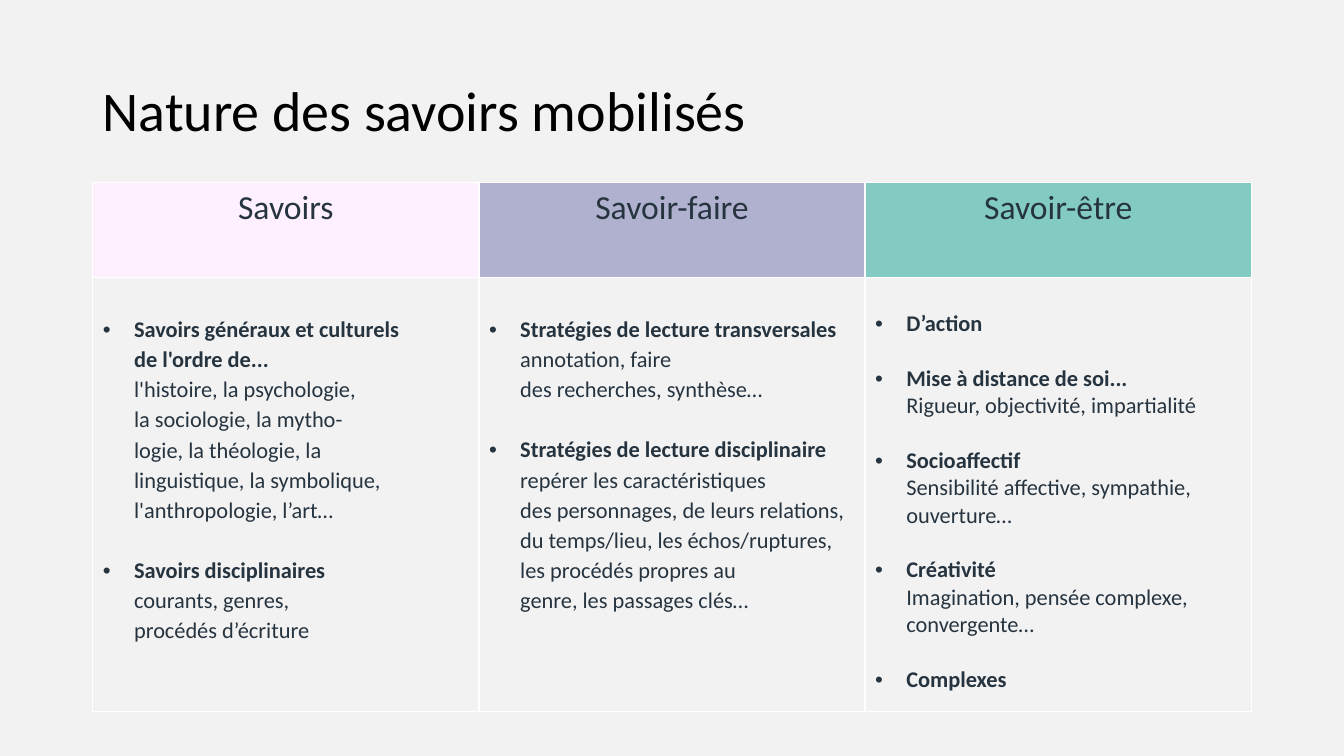
from dataclasses import dataclass

from lxml import etree
from pptx import Presentation
from pptx.dml.color import RGBColor
from pptx.enum.text import MSO_ANCHOR, PP_ALIGN
from pptx.oxml.ns import qn
from pptx.util import Inches, Pt

CENTER = PP_ALIGN.CENTER
MIDDLE = MSO_ANCHOR.MIDDLE
TIE = "~"
HARD_SPACE = chr(160)


@dataclass(frozen=True)
class Theme:
    font: str = "Calibri"
    background: str = "F2F2F2"
    title: str = "000000"
    text: str = "263440"
    border: str = "FFFFFF"
    title_size: int = 40
    header_size: int = 24
    body_size: int = 16
    border_width: int = 1


@dataclass(frozen=True)
class Column:
    heading: str
    color: str
    opacity: int
    top_margin: float
    line_spacing: float
    gap: float
    topics: tuple


THEME = Theme()

COLUMNS = (
    Column("Savoirs", "FEF0FE", 100, 0.36, 1.1, 21.5, (
        ("Savoirs généraux et culturels de~l'ordre de...",
         "l'histoire, la~psychologie, la~sociologie, la mytho-logie,~la~théologie, "
         "la linguistique,~la~symbolique, l'anthropologie, l’art…"),
        ("Savoirs disciplinaires", "courants, genres, procédés~d’écriture"),
    )),
    Column("Savoir-faire", "AFB1CF", 100, 0.36, 1.1, 21.5, (
        ("Stratégies de~lecture~transversales",
         "annotation, faire des~recherches,~synthèse…"),
        ("Stratégies de lecture~disciplinaire",
         "repérer les caractéristiques des~personnages, de~leurs~relations, "
         "du~temps/lieu, les échos/ruptures, les~procédés~propres au "
         "genre,~les~passages~clés…"),
    )),
    Column("Savoir-être", "1FA699", 52, 0.33, 1.0, 19.5, (
        ("D’action", ""),
        ("Mise à distance de soi...", "Rigueur, objectivité, impartialité"),
        ("Socioaffectif", "Sensibilité affective, sympathie, ouverture…"),
        ("Créativité", "Imagination, pensée complexe, convergente…"),
        ("Complexes", ""),
    )),
)


def style(paragraph, size, color):
    font = paragraph.font
    font.name = THEME.font
    font.size = Pt(size)
    font.color.rgb = RGBColor.from_string(color)


def add_title(slide, text):
    title = slide.shapes.add_textbox(Inches(0.92), Inches(0.4), Inches(11.5), Inches(1.45))
    frame = title.text_frame
    frame.word_wrap = True
    frame.vertical_anchor = MIDDLE
    paragraph = frame.paragraphs[0]
    paragraph.text = text
    paragraph.line_spacing = 0.9
    style(paragraph, THEME.title_size, THEME.title)


def add_borders(cell):
    properties = cell._tc.get_or_add_tcPr()
    for side in ("a:lnL", "a:lnR", "a:lnT", "a:lnB"):
        line = etree.SubElement(properties, qn(side), w=str(Pt(THEME.border_width)))
        fill = etree.SubElement(line, qn("a:solidFill"))
        etree.SubElement(fill, qn("a:srgbClr"), val=THEME.border)


def paint(cell, color, opacity=100):
    add_borders(cell)
    cell.fill.solid()
    cell.fill.fore_color.rgb = RGBColor.from_string(color)
    if opacity < 100:
        tint = cell._tc.tcPr.find(qn("a:solidFill")).find(qn("a:srgbClr"))
        etree.SubElement(tint, qn("a:alpha"), val=str(opacity * 1000))


def add_bullet(paragraph):
    properties = paragraph._p.get_or_add_pPr()
    properties.set("marL", str(Inches(0.31)))
    properties.set("indent", str(Inches(-0.31)))
    etree.SubElement(properties, qn("a:buFont"), typeface="Arial")
    etree.SubElement(properties, qn("a:buChar"), char="•")


def add_words(paragraph, words):
    run = paragraph.add_run()
    run.text = words.replace(TIE, HARD_SPACE)
    return run


def fill_heading(cell, column):
    paint(cell, column.color, column.opacity)
    paragraph = cell.text_frame.paragraphs[0]
    paragraph.text = column.heading
    paragraph.alignment = CENTER
    style(paragraph, THEME.header_size, THEME.text)


def fill_topics(cell, column):
    paint(cell, THEME.background)
    cell.margin_top = Inches(column.top_margin)
    frame = cell.text_frame
    for index, (topic, details) in enumerate(column.topics):
        paragraph = frame.add_paragraph() if index else frame.paragraphs[0]
        add_bullet(paragraph)
        paragraph.line_spacing = column.line_spacing
        if index:
            paragraph.space_before = Pt(column.gap)
        style(paragraph, THEME.body_size, THEME.text)
        add_words(paragraph, topic).font.bold = True
        if details:
            paragraph.add_line_break()
            add_words(paragraph, details)


def add_knowledge_table(slide):
    table = slide.shapes.add_table(
        2, len(COLUMNS), Inches(0.92), Inches(1.81), Inches(11.5), Inches(5.25)).table
    table.first_row = False
    table.horz_banding = False
    table.rows[0].height = Inches(0.94)
    table.rows[1].height = Inches(4.31)
    for index, column in enumerate(COLUMNS):
        table.columns[index].width = Inches(3.83)
        fill_heading(table.cell(0, index), column)
        fill_topics(table.cell(1, index), column)


def main():
    deck = Presentation()
    deck.slide_width = Inches(13.33)
    deck.slide_height = Inches(7.5)
    slide = deck.slides.add_slide(deck.slide_layouts[6])
    slide.background.fill.solid()
    slide.background.fill.fore_color.rgb = RGBColor.from_string(THEME.background)
    add_title(slide, "Nature des savoirs mobilisés")
    add_knowledge_table(slide)
    deck.save("out.pptx")


if __name__ == "__main__":
    main()
